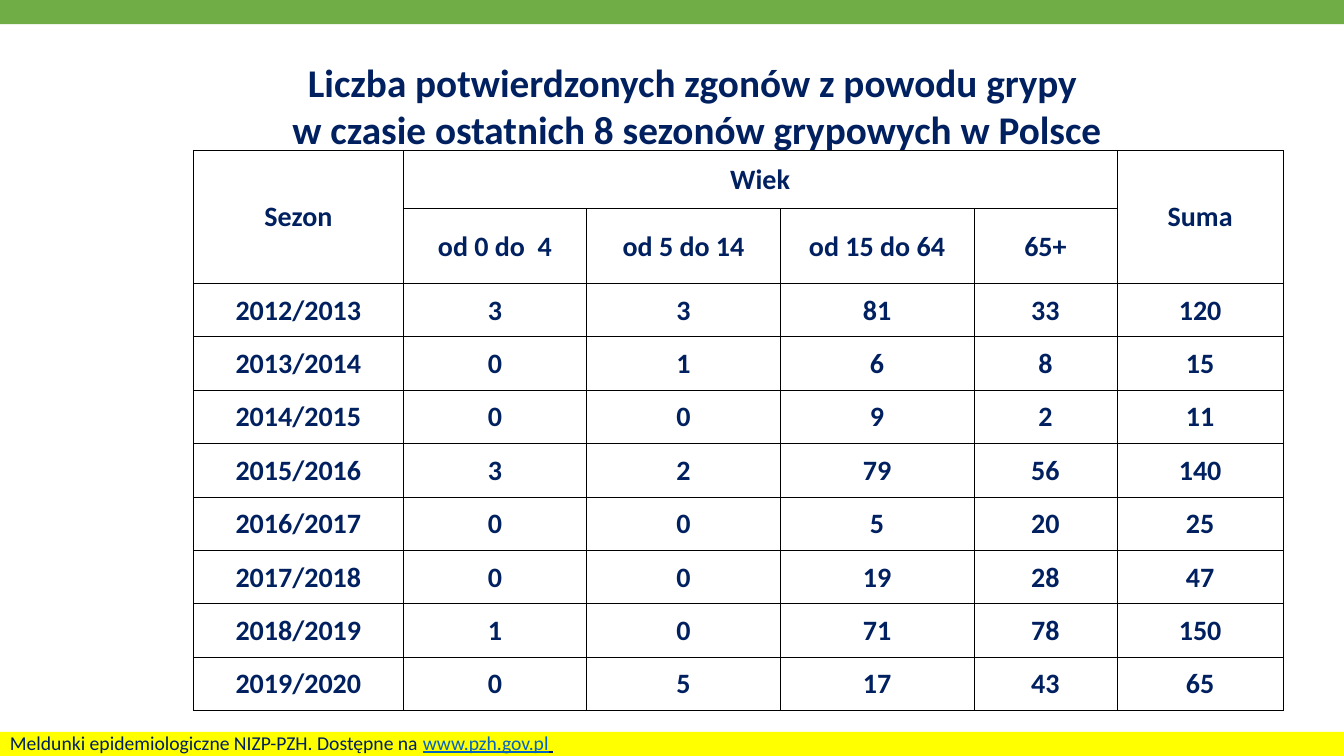
from lxml import etree
from pptx import Presentation
from pptx.dml.color import RGBColor
from pptx.enum.shapes import MSO_SHAPE
from pptx.enum.text import MSO_ANCHOR, MSO_AUTO_SIZE, PP_ALIGN
from pptx.oxml.ns import qn
from pptx.util import Inches, Pt

COLORS = {"navy": "002060", "green": "70AD47", "yellow": "FFFF00",
          "link": "0563C1", "white": "FFFFFF", "black": "000000"}
FONT = "Calibri"
SLIDE_WIDTH, SLIDE_HEIGHT, BAND_HEIGHT = 13.33, 7.5, 0.24

TITLE = ["Liczba potwierdzonych zgonów z powodu grypy ",
         "w czasie ostatnich 8 sezonów grypowych w Polsce"]
SOURCE = "Meldunki epidemiologiczne NIZP-PZH. Dostępne na "
SOURCE_LINK = "www.pzh.gov.pl"

HEADERS = [
    ["Sezon", "Wiek", "", "", "", "Suma"],
    ["", "od 0 do  4", "od 5 do 14", "od 15 do 64", "65+", ""],
]
DEATHS = [
    ("2012/2013", 3, 3, 81, 33, 120),
    ("2013/2014", 0, 1, 6, 8, 15),
    ("2014/2015", 0, 0, 9, 2, 11),
    ("2015/2016", 3, 2, 79, 56, 140),
    ("2016/2017", 0, 0, 5, 20, 25),
    ("2017/2018", 0, 0, 19, 28, 47),
    ("2018/2019", 1, 0, 71, 78, 150),
    ("2019/2020", 0, 5, 17, 43, 65),
]
MERGES = [((0, 0), (1, 0)), ((0, 1), (0, 4)), ((0, 5), (1, 5))]
COLUMN_WIDTHS = [2.08, 1.82, 1.92, 1.92, 1.42, 1.65]
ROW_HEIGHTS = [0.58, 0.74] + [0.53] * len(DEATHS)


def color(name):
    return RGBColor.from_string(COLORS[name])


def add_text(paragraph, text, size=20, fill="navy", bold=False,
             underline=False, align=PP_ALIGN.LEFT):
    paragraph.alignment = align
    run = paragraph.add_run()
    run.text = text
    font = run.font
    font.name, font.size = FONT, Pt(size)
    font.bold, font.underline = bold, underline
    font.color.rgb = color(fill)


def add_band(slide, top, fill):
    band = slide.shapes.add_shape(MSO_SHAPE.RECTANGLE, 0, Inches(top),
                                  Inches(SLIDE_WIDTH), Inches(BAND_HEIGHT))
    band.shadow.inherit = False
    band.fill.solid()
    band.fill.fore_color.rgb = color(fill)
    band.line.fill.background()


def add_borders(cell, width=0.5):
    properties = cell._tc.get_or_add_tcPr()
    for side in ("a:lnL", "a:lnR", "a:lnT", "a:lnB"):
        line = etree.SubElement(properties, qn(side), w=str(Pt(width)))
        solid = etree.SubElement(line, qn("a:solidFill"))
        etree.SubElement(solid, qn("a:srgbClr"), val=COLORS["black"])


def format_cell(cell, text):
    add_borders(cell)
    cell.fill.solid()
    cell.fill.fore_color.rgb = color("white")
    cell.vertical_anchor = MSO_ANCHOR.MIDDLE
    cell.margin_left = cell.margin_right = cell.margin_top = Inches(0.01)
    cell.margin_bottom = 0
    if text:
        add_text(cell.text_frame.paragraphs[0], text, bold=True,
                 align=PP_ALIGN.CENTER)


def add_title(slide):
    title = slide.shapes.title
    title.left, title.top = Inches(0.91), Inches(0.57)
    title.width, title.height = Inches(12), Inches(0.95)
    frame = title.text_frame
    frame.auto_size = MSO_AUTO_SIZE.NONE
    frame.vertical_anchor = MSO_ANCHOR.MIDDLE
    frame.margin_top = frame.margin_bottom = 0
    for index, text in enumerate(TITLE):
        paragraph = frame.add_paragraph() if index else frame.paragraphs[0]
        add_text(paragraph, text, size=28, bold=True, align=PP_ALIGN.CENTER)


def add_deaths_table(slide):
    rows = HEADERS + DEATHS
    table = slide.shapes.add_table(
        len(rows), len(COLUMN_WIDTHS), Inches(1.92), Inches(1.49),
        Inches(sum(COLUMN_WIDTHS)), Inches(sum(ROW_HEIGHTS))).table
    table.first_row = table.horz_banding = False
    for column, width in zip(table.columns, COLUMN_WIDTHS):
        column.width = Inches(width)
    for row, height, values in zip(table.rows, ROW_HEIGHTS, rows):
        row.height = Inches(height)
        for cell, value in zip(row.cells, values):
            format_cell(cell, str(value))
    for first, last in MERGES:
        table.cell(*first).merge(table.cell(*last))


def add_source(slide):
    box = slide.shapes.add_textbox(0, Inches(7.2), Inches(7.72), Inches(0.34))
    box.text_frame.word_wrap = True
    paragraph = box.text_frame.paragraphs[0]
    add_text(paragraph, SOURCE, size=14)
    add_text(paragraph, SOURCE_LINK, size=14, fill="link", underline=True)
    add_text(paragraph, " ", size=14, underline=True)


def main():
    presentation = Presentation()
    presentation.slide_width = Inches(SLIDE_WIDTH)
    presentation.slide_height = Inches(SLIDE_HEIGHT)
    slide = presentation.slides.add_slide(presentation.slide_layouts[5])
    add_band(slide, 0, "green")
    add_band(slide, SLIDE_HEIGHT - BAND_HEIGHT, "yellow")
    add_title(slide)
    add_deaths_table(slide)
    add_source(slide)
    presentation.save("out.pptx")


if __name__ == "__main__":
    main()
